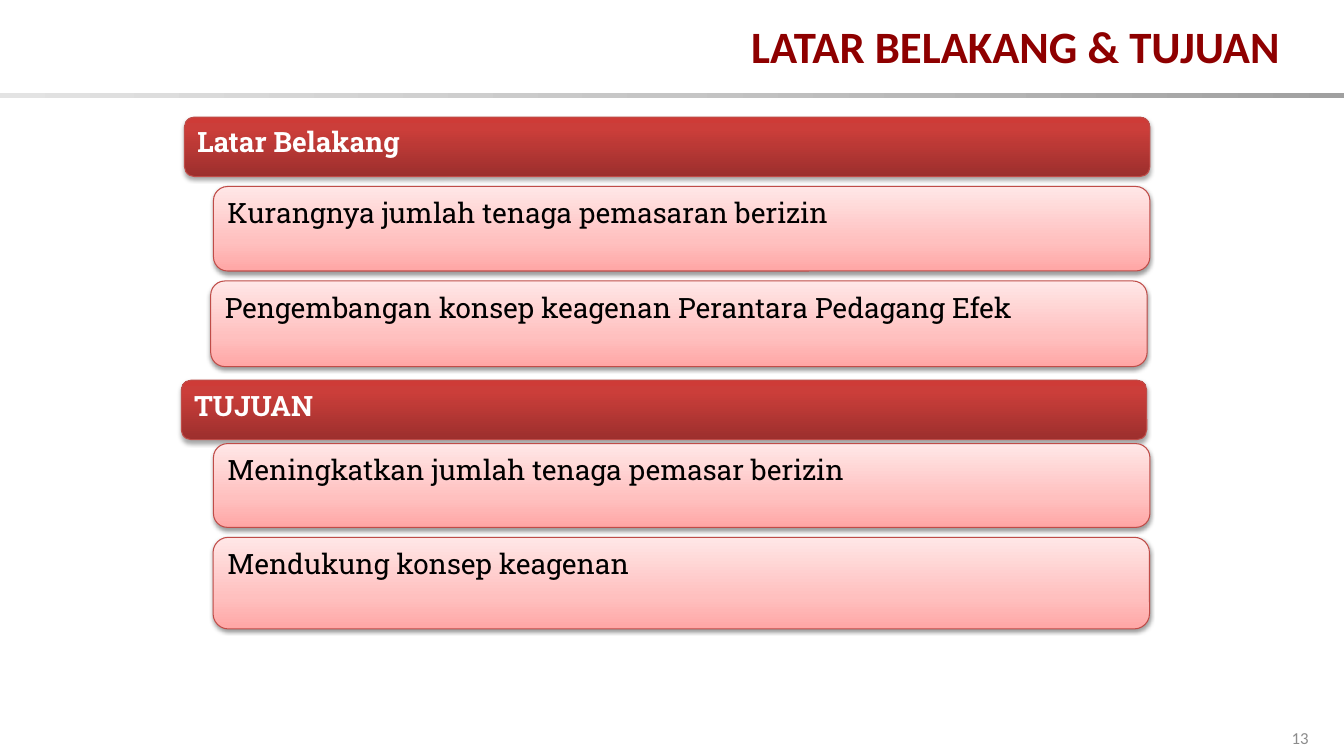
from lxml.etree import SubElement
from pptx import Presentation
from pptx.dml.color import RGBColor
from pptx.enum.shapes import MSO_SHAPE
from pptx.enum.text import MSO_ANCHOR, PP_ALIGN
from pptx.oxml.ns import qn
from pptx.util import Cm, Pt

COLORS = {
    "title": "8E0000",
    "border": "BF4C48",
    "heading": "FFFFFF",
    "item": "000000",
    "shadow": "000000",
    "page": "8C8C8C",
    "paper": "FFFFFF",
}
RULE_GRADIENT = [(0, "A0A0A0"), (50, "C5C5C5"), (100, "E3E3E3")]
HEADING_GRADIENT = [(0, "9C2F2D"), (80, "CB3E3A"), (100, "CE3B37")]
ITEM_GRADIENT = [(0, "FFA6A5"), (35, "FFC0BF"), (100, "FFE7E7")]

HEADING_HEIGHT = 1.5
ITEM_GAP = 0.25
SECTIONS = [
    {
        "heading": "Latar Belakang",
        "box": (4.65, 2.95, 24.33),
        "first_gap": 0.25,
        "items": [
            ("Kurangnya jumlah tenaga pemasaran berizin", 0.73, 2.13),
            ("Pengembangan konsep keagenan Perantara Pedagang Efek", 0.66, 2.16),
        ],
    },
    {
        "heading": "TUJUAN",
        "box": (4.57, 9.58, 24.33),
        "first_gap": 0.1,
        "items": [
            ("Meningkatkan jumlah tenaga pemasar berizin", 0.81, 2.11),
            ("Mendukung konsep keagenan", 0.8, 2.31),
        ],
    },
]
ITEM_WIDTH = 23.6


def color(name):
    return RGBColor.from_string(COLORS[name])


def set_font(paragraph, name, size, color_name, bold=False):
    font = paragraph.font
    font.name = name
    font.size = Pt(size)
    font.bold = bold
    font.color.rgb = color(color_name)


def fill_gradient(shape, stops, angle):
    shape.fill.gradient()
    shape.fill.gradient_angle = 360 - angle
    stop_list = shape.fill._fill._gradFill.find(qn("a:gsLst"))
    for stop in list(stop_list):
        stop_list.remove(stop)
    for position, value in stops:
        stop = SubElement(stop_list, qn("a:gs"), pos=str(position * 1000))
        SubElement(stop, qn("a:srgbClr"), val=value)


def cast_shadow(shape, opacity, distance):
    shape.shadow.inherit = False
    effects = shape._element.spPr.find(qn("a:effectLst"))
    shadow = SubElement(
        effects,
        qn("a:outerShdw"),
        blurRad=str(Pt(3.1)),
        dist=str(Pt(distance)),
        dir="5400000",
        rotWithShape="0",
    )
    tint = SubElement(shadow, qn("a:srgbClr"), val=COLORS["shadow"])
    SubElement(tint, qn("a:alpha"), val=str(opacity * 1000))


def add_bar(slide, left, top, width, height, text, gradient):
    bar = slide.shapes.add_shape(
        MSO_SHAPE.ROUNDED_RECTANGLE, Cm(left), Cm(top), Cm(width), Cm(height)
    )
    fill_gradient(bar, gradient, 270)
    bar.line.color.rgb = color("border")
    bar.line.width = Pt(0.75)
    bar.text_frame.text = text
    bar.text_frame.vertical_anchor = MSO_ANCHOR.TOP
    return bar


def add_section(slide, left, top, width, heading, first_gap, items):
    heading_bar = add_bar(
        slide, left, top, width, HEADING_HEIGHT, heading, HEADING_GRADIENT
    )
    cast_shadow(heading_bar, 35, 1.8)
    heading_text = heading_bar.text_frame.paragraphs[0]
    heading_text.alignment = PP_ALIGN.LEFT
    heading_text.space_after = Pt(12)
    set_font(heading_text, "Roboto Slab", 20, "heading", bold=True)

    item_top = top + HEADING_HEIGHT + first_gap
    for text, indent, height in items:
        item_bar = add_bar(
            slide, left + indent, item_top, ITEM_WIDTH, height, text, ITEM_GRADIENT
        )
        cast_shadow(item_bar, 38, 1.6)
        item_text = item_bar.text_frame.paragraphs[0]
        item_text.alignment = PP_ALIGN.JUSTIFY
        set_font(item_text, "Roboto Slab", 20, "item")
        item_top += height + ITEM_GAP


def add_header(slide, width):
    rule = slide.shapes.add_shape(MSO_SHAPE.RECTANGLE, 0, Cm(2.34), width, Cm(0.13))
    fill_gradient(rule, RULE_GRADIENT, 180)
    rule.line.fill.background()
    rule.shadow.inherit = False

    title = slide.shapes.title
    title.left, title.top = Cm(13.34), Cm(0.2)
    title.width, title.height = Cm(19.18), Cm(1.9)
    title.text_frame.text = "LATAR BELAKANG & TUJUAN"
    title.text_frame.vertical_anchor = MSO_ANCHOR.MIDDLE
    title_text = title.text_frame.paragraphs[0]
    title_text.alignment = PP_ALIGN.RIGHT
    set_font(title_text, "Calibri", 32, "title", bold=True)


def add_page_number(slide, left, top, width, height):
    page = slide.shapes.add_shape(
        MSO_SHAPE.RECTANGLE, Cm(left), Cm(top), Cm(width), Cm(height)
    )
    page.fill.solid()
    page.fill.fore_color.rgb = color("paper")
    page.line.fill.background()
    page.shadow.inherit = False
    page.text_frame.text = "13"
    page.text_frame.vertical_anchor = MSO_ANCHOR.MIDDLE
    page_text = page.text_frame.paragraphs[0]
    page_text.alignment = PP_ALIGN.CENTER
    set_font(page_text, "Calibri", 12, "page")


def main():
    presentation = Presentation()
    presentation.slide_width = Cm(33.87)
    presentation.slide_height = Cm(19.05)
    slide = presentation.slides.add_slide(presentation.slide_layouts[5])
    add_header(slide, presentation.slide_width)
    for section in SECTIONS:
        add_section(
            slide,
            *section["box"],
            section["heading"],
            section["first_gap"],
            section["items"],
        )
    add_page_number(slide, 32.18, 18.03, 1.17, 1.12)
    presentation.save("out.pptx")


if __name__ == "__main__":
    main()
